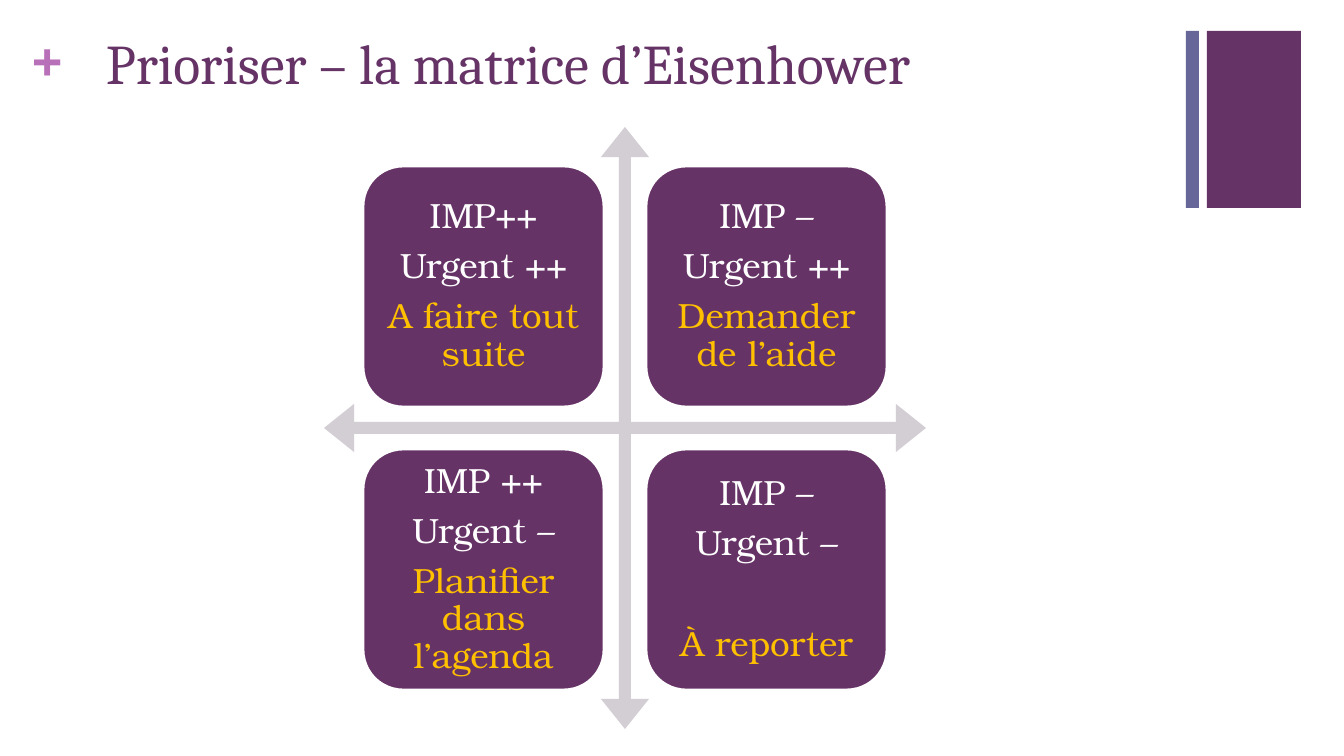
from pptx import Presentation
from pptx import util as u
from pptx.dml.color import RGBColor
from pptx.enum import shapes, text

PX = 914400 / 100.8
PURPLE = RGBColor(0x66, 0x33, 0x66)
BLUE = RGBColor(0x66, 0x66, 0x99)
PINK = RGBColor(0xB8, 0x70, 0xB8)
GREY = RGBColor(0xD3, 0xCE, 0xD3)
AMBER = RGBColor(0xFF, 0xC0, 0x00)
WHITE = RGBColor(0xFF, 0xFF, 0xFF)
BODY_FONT = "TeX Gyre Bonum"
TITLE_FONT = "Cambria"

QUADRANTS = [
    [("IMP++", "Urgent ++", "A faire tout suite"),
     ("IMP –", "Urgent ++", "Demander de l’aide")],
    [("IMP ++", "Urgent –", "Planifier dans l’agenda"),
     ("IMP –", "Urgent –", "À reporter")],
]


def px(length):
    return u.Emu(round(length * PX))


def set_insets(frame, x, y):
    frame.margin_left = frame.margin_right = px(x)
    frame.margin_top = frame.margin_bottom = px(y)


def style(paragraph, font_name, size, color, bold=False):
    for run in paragraph.runs:
        run.font.name = font_name
        run.font.size = u.Pt(size)
        run.font.color.rgb = color
        run.font.bold = bold


def add_filled(slide, preset, box, color):
    filled = slide.shapes.add_shape(preset, *map(px, box))
    filled.shadow.inherit = False
    filled.fill.solid()
    filled.fill.fore_color.rgb = color
    filled.line.fill.background()
    return filled


def add_heading(slide, left, top, width, height):
    plus = slide.shapes.add_textbox(px(left), px(top + 2), px(38), px(61))
    plus.text_frame.word_wrap = True
    set_insets(plus.text_frame, 0, 0)
    plus.text_frame.text = "+"
    style(plus.text_frame.paragraphs[0], BODY_FONT, 36, PINK, True)

    title = slide.shapes.title
    title.left, title.top = px(left + 63), px(top)
    title.width, title.height = px(width - 63), px(height)
    frame = title.text_frame
    frame.text = "Prioriser – la matrice d’Eisenhower"
    frame.word_wrap = True
    frame.auto_size = text.MSO_AUTO_SIZE.NONE
    frame.vertical_anchor = text.MSO_ANCHOR.TOP
    set_insets(frame, 10, 5)
    frame.paragraphs[0].alignment = text.PP_ALIGN.LEFT
    style(frame.paragraphs[0], TITLE_FONT, 40, PURPLE)


def add_corner_bars(slide, left, top, width, height):
    bar, gap = 13, 8
    rectangle = shapes.MSO_SHAPE.RECTANGLE
    add_filled(slide, rectangle, (left, top, bar, height), BLUE)
    add_filled(slide, rectangle,
               (left + bar + gap, top, width - bar - gap, height), PURPLE)


def add_quadrant(slide, left, top, side, lines):
    quadrant = add_filled(slide, shapes.MSO_SHAPE.ROUNDED_RECTANGLE,
                          (left, top, side, side), PURPLE)
    quadrant.line.color.rgb = WHITE
    quadrant.line.width = u.Pt(2)
    frame = quadrant.text_frame
    frame.word_wrap = True
    frame.vertical_anchor = text.MSO_ANCHOR.MIDDLE
    set_insets(frame, 10, 10)
    frame.text = "\n".join(lines)
    for paragraph, color in zip(frame.paragraphs, (WHITE, WHITE, AMBER)):
        paragraph.alignment = text.PP_ALIGN.CENTER
        paragraph.line_spacing = 0.9
        paragraph.space_before = u.Pt(0)
        paragraph.space_after = u.Pt(8.75)
        style(paragraph, BODY_FONT, 25, color)
    if lines[-1] == "À reporter":
        frame.paragraphs[-1].space_before = u.Pt(36)


def add_matrix(slide, left, top, side):
    axes = add_filled(slide, shapes.MSO_SHAPE.QUAD_ARROW,
                      (left, top, side, side), GREY)
    for index, ratio in enumerate((0.02, 0.04, 0.05)):
        axes.adjustments[index] = ratio
    margin, gap = 39, 42
    tile = (side - 2 * margin - gap) / 2
    for row, quadrants in enumerate(QUADRANTS):
        for column, lines in enumerate(quadrants):
            add_quadrant(slide, left + margin + column * (tile + gap),
                         top + margin + row * (tile + gap), tile, lines)


def main():
    deck = Presentation()
    deck.slide_width, deck.slide_height = px(1344), px(756)
    slide = deck.slides.add_slide(deck.slide_layouts[5])
    add_corner_bars(slide, 1186, 31, 115, 177)
    add_heading(slide, 33, 23, 970, 104)
    add_matrix(slide, 324, 127, 602)
    deck.save("out.pptx")


if __name__ == "__main__":
    main()
